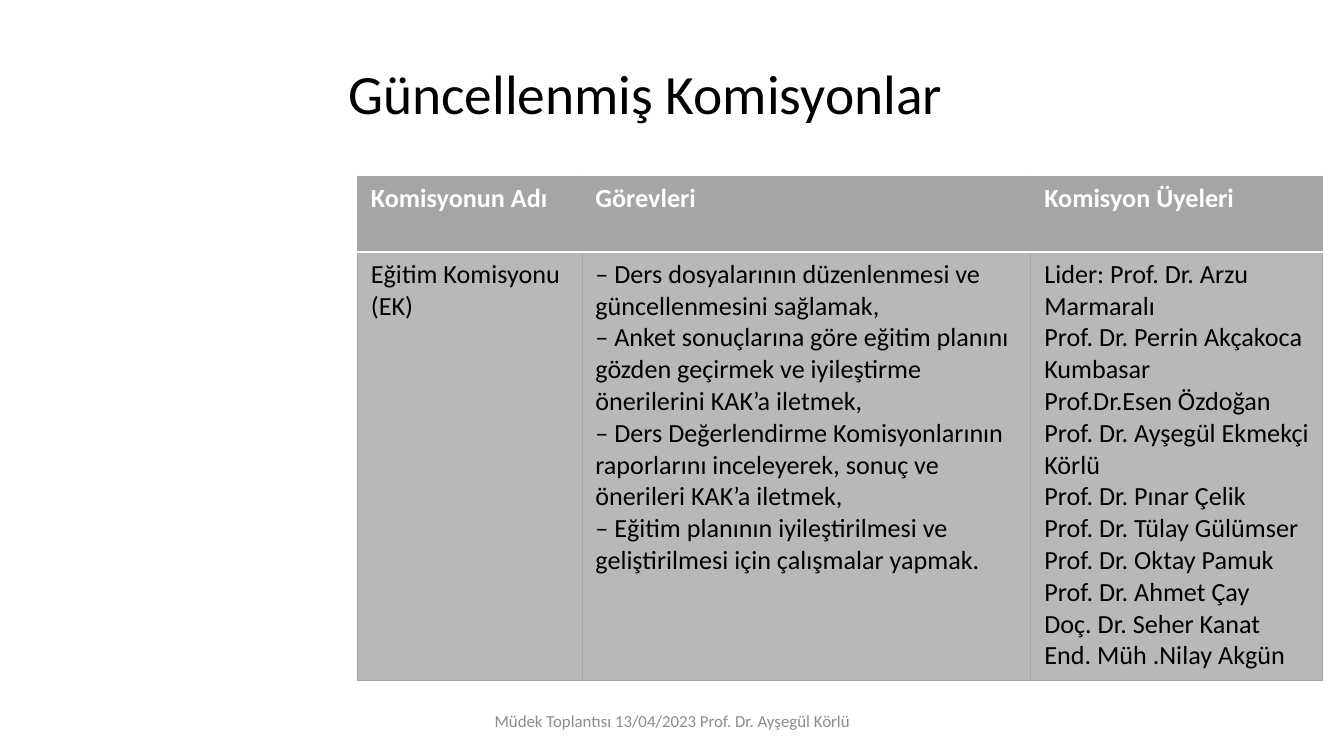
import pptx
import pptx.util
import pptx.dml.color
import pptx.enum.text
import pptx.oxml
import pptx.oxml.ns

Pt = pptx.util.Pt
MIDDLE = pptx.enum.text.MSO_ANCHOR.MIDDLE
CENTER = pptx.enum.text.PP_ALIGN.CENTER
GRAY, WHITE, BLACK = "A5A5A5", "FFFFFF", "000000"

HEADS = ["Komisyonun Adı", "Görevleri", "Komisyon Üyeleri"]
BODY = [
    ["Eğitim Komisyonu (EK)"],
    [
        "– Ders dosyalarının düzenlenmesi ve güncellenmesini sağlamak,",
        "– Anket sonuçlarına göre eğitim planını gözden geçirmek ve iyileştirme önerilerini KAK’a iletmek,",
        "– Ders Değerlendirme Komisyonlarının raporlarını inceleyerek, sonuç ve önerileri KAK’a iletmek,",
        "– Eğitim planının iyileştirilmesi ve geliştirilmesi için çalışmalar yapmak.",
    ],
    [
        "Lider: Prof. Dr. Arzu Marmaralı",
        "Prof. Dr. Perrin Akçakoca Kumbasar",
        "Prof.Dr.Esen Özdoğan Prof. Dr. Ayşegül Ekmekçi Körlü",
        "Prof. Dr. Pınar Çelik",
        "Prof. Dr. Tülay Gülümser Prof. Dr. Oktay Pamuk Prof. Dr. Ahmet Çay",
        "Doç. Dr. Seher Kanat",
        "End. Müh .Nilay Akgün",
    ],
]


def color(code):
    return pptx.dml.color.RGBColor.from_string(code)


def write(frame, lines, size, code, bold=False, align=None, space=None):
    """Fill a text frame, one paragraph a line."""
    frame.word_wrap = True
    for i, line in enumerate(lines):
        para = frame.add_paragraph() if i else frame.paragraphs[0]
        para.alignment = align
        para.line_spacing = space
        run = para.add_run()
        run.text = line
        font = run.font
        font.name, font.size, font.bold = "Calibri", Pt(size), bold
        font.color.rgb = color(code)


def edge(cell, sides):
    """Draw cell borders; sides are (tag, colour, width) in L, R, T, B order."""
    props = cell._tc.get_or_add_tcPr()
    for i, (tag, code, width) in enumerate(sides):
        props.insert(i, pptx.oxml.parse_xml(
            f'<a:{tag} {pptx.oxml.ns.nsdecls("a")} w="{Pt(width)}"><a:solidFill>'
            f'<a:srgbClr val="{code}"/></a:solidFill></a:{tag}>'))


def add_title(slide, x, y, w, h):
    title = slide.shapes.title
    title.left, title.top, title.width, title.height = Pt(x), Pt(y), Pt(w), Pt(h)
    frame = title.text_frame
    frame.auto_size = pptx.enum.text.MSO_AUTO_SIZE.NONE
    frame.vertical_anchor = MIDDLE
    write(frame, ["Güncellenmiş Komisyonlar"], 29.7, BLACK,
          align=pptx.enum.text.PP_ALIGN.LEFT, space=0.9)


def add_grid(slide, x, y, w, h):
    head = 40.6
    table = slide.shapes.add_table(2, 3, Pt(x), Pt(y), Pt(w), Pt(h)).table
    table.horz_banding = False
    for col, part in zip(table.columns, (1.67, 3.34, 2.17)):
        col.width = Pt(w * part / 7.18)
    table.rows[0].height, table.rows[1].height = Pt(head), Pt(h - head)

    line, rule = (GRAY, 0.5), (WHITE, 1)
    for i in range(3):
        # Header row over a white rule, then the body row
        rows = [([HEADS[i]], WHITE, True, GRAY, line, rule),
                (BODY[i], BLACK, False, "B8B8B8", rule, line)]
        for j, (lines, ink, bold, fill, top, base) in enumerate(rows):
            cell = table.cell(j, i)
            write(cell.text_frame, lines, 14, ink, bold)
            cell.fill.solid()
            cell.fill.fore_color.rgb = color(fill)
            edge(cell, [("lnL", *line), ("lnR", *line), ("lnT", *top), ("lnB", *base)])


def add_footer(slide, x, y, w, h):
    box = slide.shapes.add_textbox(Pt(x), Pt(y), Pt(w), Pt(h))
    box.text_frame.vertical_anchor = MIDDLE
    write(box.text_frame, ["Müdek Toplantısı 13/04/2023 Prof. Dr. Ayşegül Körlü"],
          9, "8C8C8C", align=CENTER)


def main():
    deck = pptx.Presentation()
    deck.slide_width, deck.slide_height = Pt(720), Pt(405)
    slide = deck.slides.add_slide(deck.slide_layouts[5])
    add_title(slide, 179.3, 33.8, 504.7, 36)
    add_grid(slide, 191.5, 94.3, 517, 270.4)
    add_footer(slide, 238.3, 375.1, 243.4, 21.6)
    deck.save("out.pptx")


if __name__ == "__main__":
    main()
